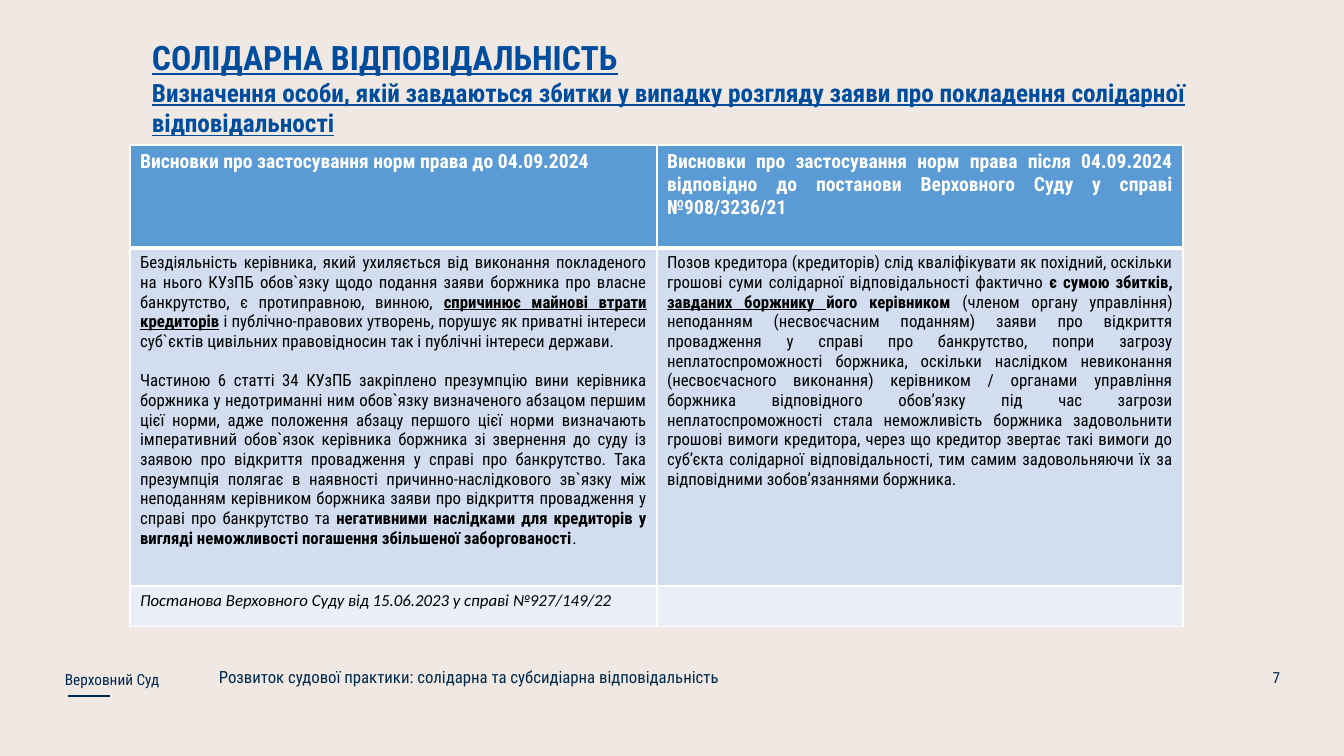
from lxml import etree
from pptx import Presentation
from pptx.dml.color import RGBColor
from pptx.enum.shapes import MSO_CONNECTOR
from pptx.enum.text import MSO_ANCHOR, PP_ALIGN
from pptx.oxml.ns import qn
from pptx.util import Emu, Pt

STRAIGHT = MSO_CONNECTOR.STRAIGHT
MIDDLE = MSO_ANCHOR.MIDDLE
JUSTIFY = PP_ALIGN.JUSTIFY
RIGHT = PP_ALIGN.RIGHT

SAND = RGBColor(0xF0, 0xE8, 0xE3)
NAVY = RGBColor(0x00, 0x27, 0x4E)
FOOTER_NAVY = RGBColor(0x00, 0x29, 0x49)
TITLE_BLUE = RGBColor(0x00, 0x4D, 0x9D)
HEADER_BLUE = RGBColor(0x5B, 0x9B, 0xD5)
BODY_BLUE = RGBColor(0xD2, 0xDE, 0xEF)
PALE_BLUE = RGBColor(0xEA, 0xEF, 0xF7)
WHITE = RGBColor(0xFF, 0xFF, 0xFF)
BLACK = RGBColor(0x00, 0x00, 0x00)

BOLD = {"bold": True}
BOLD_UNDERLINE = {"bold": True, "underline": True}
JUSTIFIED = {"alignment": JUSTIFY}


class SlideBuilder:
    scale = 914400 / 100.8
    font = "Roboto Condensed"

    def __init__(self, deck, background):
        self.slide = deck.slides.add_slide(deck.slide_layouts[6])
        fill = self.slide.background.fill
        fill.solid()
        fill.fore_color.rgb = background

    @classmethod
    def px(cls, *lengths):
        return [Emu(round(length * cls.scale)) for length in lengths]

    def fill_text(self, frame, paragraphs, size, color):
        for index, (layout, spans) in enumerate(paragraphs):
            para = frame.add_paragraph() if index else frame.paragraphs[0]
            for name, value in layout.items():
                setattr(para, name, value)
            for text, style in spans:
                span = para.add_run()
                span.text = text
                span.font.color.rgb = color
                for name, value in {"name": self.font, "size": Pt(size), **style}.items():
                    setattr(span.font, name, value)

    def text(self, bounds, paragraphs, size, color, **frame_format):
        box = self.slide.shapes.add_textbox(*self.px(*bounds))
        for name, value in {"word_wrap": True, **frame_format}.items():
            setattr(box.text_frame, name, value)
        self.fill_text(box.text_frame, paragraphs, size, color)

    def line(self, ends, color, width):
        rule = self.slide.shapes.add_connector(STRAIGHT, *self.px(*ends))
        rule.line.color.rgb = color
        rule.line.width = Pt(width)
        etree.SubElement(rule._element.spPr, qn("a:effectLst"))

    def border(self, cell, widths):
        properties = cell._tc.get_or_add_tcPr()
        for index, (side, width) in enumerate(widths.items()):
            edge = etree.Element(qn(f"a:ln{side}"), w=str(Pt(width)))
            fill = etree.SubElement(edge, qn("a:solidFill"))
            etree.SubElement(fill, qn("a:srgbClr"), val=str(WHITE))
            properties.insert(index, edge)

    def table(self, left, top, columns, rows):
        height = sum(row["height"] for row in rows)
        bounds = self.px(left, top, sum(columns), height)
        grid = self.slide.shapes.add_table(len(rows), len(columns), *bounds).table
        for column, width in zip(grid.columns, self.px(*columns)):
            column.width = width
        for index, row in enumerate(rows):
            grid.rows[index].height = self.px(row["height"])[0]
            widths = {"L": 1, "R": 1, "T": 3 if index == 1 else 1, "B": 3 if index == 0 else 1}
            for cell, paragraphs in zip(grid.rows[index].cells, row["cells"]):
                cell.fill.solid()
                cell.fill.fore_color.rgb = row["fill"]
                self.border(cell, widths)
                self.fill_text(cell.text_frame, paragraphs, row["size"], row["color"])


HEADER_CELLS = [
    [({}, [("Висновки про застосування норм права до 04.09.2024", BOLD)])],
    [(JUSTIFIED, [("Висновки про застосування норм права після 04.09.2024 відповідно до "
                   "постанови Верховного Суду у справі №908/3236/21", BOLD)])],
]

BEFORE_CELL = [
    ({"alignment": JUSTIFY, "space_after": Pt(14)}, [
        ("Бездіяльність керівника, який ухиляється від виконання покладеного на нього КУзПБ "
         "обов`язку щодо подання заяви боржника про власне банкрутство, є протиправною, "
         "винною, ", {}),
        ("спричинює майнові втрати кредиторів", BOLD_UNDERLINE),
        (" і публічно-правових утворень, порушує як приватні інтереси суб`єктів цивільних "
         "правовідносин так і публічні інтереси держави.", {}),
    ]),
    (JUSTIFIED, [
        ("Частиною 6 статті 34 КУзПБ закріплено презумпцію вини керівника боржника у "
         "недотриманні ним обов`язку визначеного абзацом першим цієї норми, адже положення "
         "абзацу першого цієї норми визначають імперативний обов`язок керівника боржника зі "
         "звернення до суду із заявою про відкриття провадження у справі про банкрутство. "
         "Така презумпція полягає в наявності причинно-наслідкового зв`язку між неподанням "
         "керівником боржника заяви про відкриття провадження у справі про банкрутство та ", {}),
        ("негативними наслідками для кредиторів у вигляді неможливості погашення збільшеної "
         "заборгованості", BOLD),
        (".", {}),
    ]),
]

AFTER_CELL = [
    (JUSTIFIED, [
        ("Позов кредитора (кредиторів) слід кваліфікувати як похідний, оскільки грошові суми "
         "солідарної відповідальності фактично ", {}),
        ("є сумою збитків, ", BOLD),
        ("завданих боржнику ", BOLD_UNDERLINE),
        ("його керівником ", BOLD),
        ("(членом органу управління) неподанням (несвоєчасним поданням) заяви про відкриття "
         "провадження у справі про банкрутство, попри загрозу неплатоспроможності боржника, "
         "оскільки наслідком невиконання (несвоєчасного виконання) керівником / органами "
         "управління боржника відповідного обов’язку під час загрози неплатоспроможності "
         "стала неможливість боржника задовольнити грошові вимоги кредитора, через що "
         "кредитор звертає такі вимоги до суб’єкта солідарної відповідальності, тим самим "
         "задовольняючи їх за відповідними зобов’язаннями боржника.", {}),
    ]),
]

SOURCE_CELL = [({}, [("Постанова Верховного Суду від 15.06.2023 у справі №927/149/22",
                      {"name": "Calibri", "italic": True})])]

TABLE_ROWS = [
    {"height": 103, "fill": HEADER_BLUE, "size": 14, "color": WHITE, "cells": HEADER_CELLS},
    {"height": 338, "fill": BODY_BLUE, "size": 12, "color": BLACK,
     "cells": [BEFORE_CELL, AFTER_CELL]},
    {"height": 40, "fill": PALE_BLUE, "size": 12, "color": BLACK, "cells": [SOURCE_CELL, []]},
]

TITLE = [
    ({}, [("СОЛІДАРНА ВІДПОВІДАЛЬНІСТЬ", BOLD_UNDERLINE)]),
    ({}, [("Визначення особи, якій завдаються збитки у випадку розгляду заяви про покладення "
           "солідарної відповідальності", {**BOLD_UNDERLINE, "size": Pt(18)})]),
]
COURT = [({"line_spacing": 1.14}, [("Верховний Суд", {})])]
TOPIC = [({"alignment": JUSTIFY, "line_spacing": 0.9, "space_before": Pt(11)},
          [("Розвиток судової практики: солідарна та субсидіарна відповідальність", {})])]
PAGE_NUMBER = [({"alignment": RIGHT}, [("7", {})])]


def main():
    deck = Presentation()
    deck.slide_width, deck.slide_height = SlideBuilder.px(1344, 756)
    page = SlideBuilder(deck, SAND)
    page.line((68, 696, 110, 696), NAVY, 1.12)
    page.text((55, 658, 145, 40), COURT, 10.9, NAVY, vertical_anchor=MIDDLE)
    page.text((142, 32, 1174, 112), TITLE, 24, TITLE_BLUE)
    page.text((209, 664, 852, 36), TOPIC, 12, FOOTER_NAVY)
    page.text((988, 657, 302, 40), PAGE_NUMBER, 10.9, NAVY, vertical_anchor=MIDDLE)
    page.table(130, 145, (527, 526), TABLE_ROWS)
    deck.save("out.pptx")


if __name__ == "__main__":
    main()
